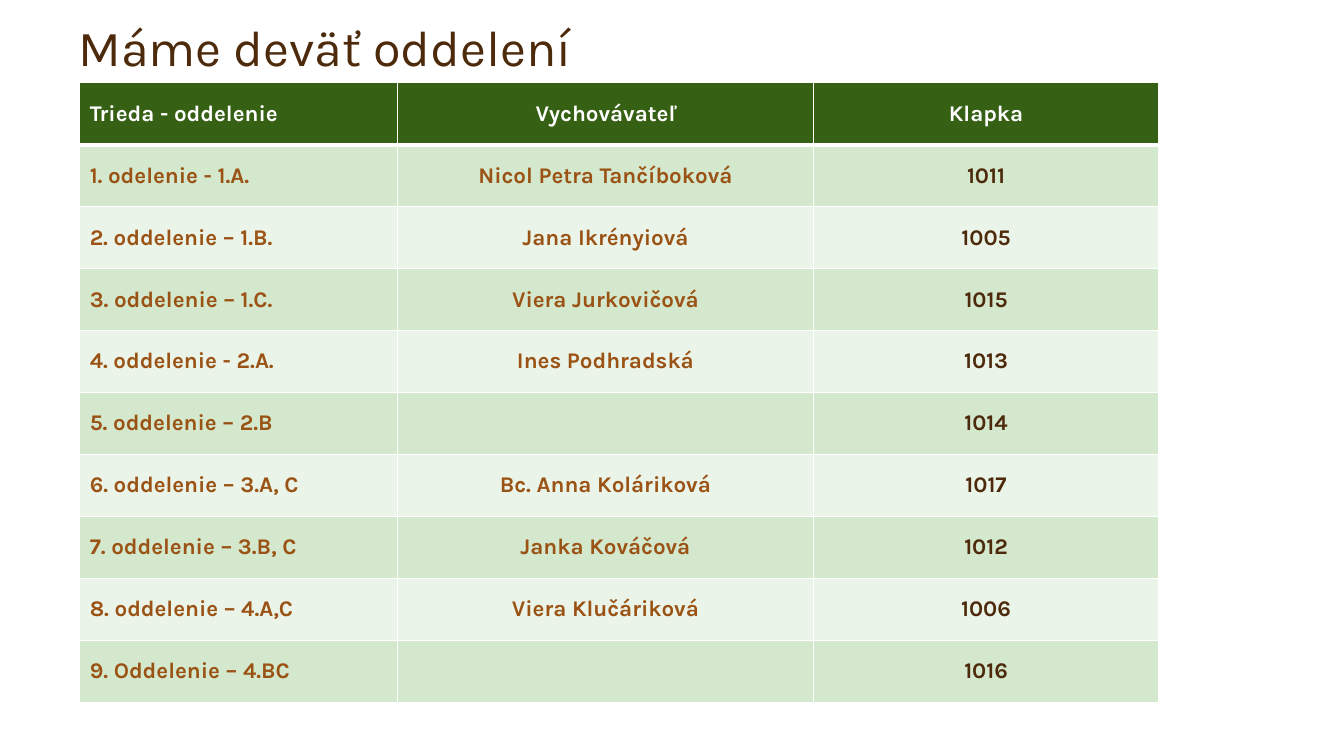
from lxml.etree import SubElement
from pptx import Presentation
from pptx.dml.color import RGBColor
from pptx.enum.text import MSO_ANCHOR as Anchor, PP_ALIGN as Align
from pptx.oxml.ns import qn
from pptx.util import Inches, Pt

COLORS = {
    "title": "4D2A0B",
    "header": "366013",
    "header_text": "FFFFFF",
    "odd_row": "D4E8CD",
    "even_row": "EBF4E8",
    "name": "9A5315",
    "extension": "4D2A0B",
    "border": "FFFFFF",
}
FONT = "Karla"
ROWS = [
    ("Trieda - oddelenie", "Vychovávateľ", "Klapka"),
    ("1. odelenie - 1.A.", "Nicol Petra Tančíboková", "1011"),
    ("2. oddelenie – 1.B.", "Jana Ikrényiová", "1005"),
    ("3. oddelenie – 1.C.", "Viera Jurkovičová", "1015"),
    ("4. oddelenie - 2.A.", "Ines Podhradská", "1013"),
    ("5. oddelenie – 2.B", "", "1014"),
    ("6. oddelenie – 3.A, C", "Bc. Anna Koláriková", "1017"),
    ("7. oddelenie – 3.B, C", "Janka Kováčová", "1012"),
    ("8. oddelenie – 4.A,C", "Viera Klučáriková", "1006"),
    ("9. Oddelenie – 4.BC", "", "1016"),
]
COLUMN_WIDTHS = [3.15, 4.13, 3.42]
TABLE_LEFT, TABLE_TOP, TABLE_HEIGHT = 0.79, 0.82, 6.15


def style_text(para, size, color, bold=False):
    for span in para.runs:
        span.font.name = FONT
        span.font.size = Pt(size)
        span.font.bold = bold
        span.font.color.rgb = RGBColor.from_string(COLORS[color])


def add_border(cell, side, width):
    line = SubElement(cell._tc.get_or_add_tcPr(), qn(f"a:ln{side}"), w=str(Pt(width)))
    fill = SubElement(line, qn("a:solidFill"))
    SubElement(fill, qn("a:srgbClr"), val=COLORS["border"])


deck = Presentation()
deck.slide_width, deck.slide_height = Inches(13.33), Inches(7.5)
page = deck.slides.add_slide(deck.slide_layouts[6])

title = page.shapes.add_textbox(Inches(0.68), 0, Inches(10.62), Inches(TABLE_TOP))
title_frame = title.text_frame
title_frame.word_wrap = True
title_frame.vertical_anchor = Anchor.BOTTOM
title_frame.text = "Máme deväť oddelení"
title_frame.paragraphs[0].line_spacing = 0.9
style_text(title_frame.paragraphs[0], 36, "title")

table = page.shapes.add_table(
    len(ROWS), len(COLUMN_WIDTHS), Inches(TABLE_LEFT), Inches(TABLE_TOP),
    Inches(sum(COLUMN_WIDTHS)), Inches(TABLE_HEIGHT),
).table
for column, width in zip(table.columns, COLUMN_WIDTHS):
    column.width = Inches(width)

for row_index, row in enumerate(ROWS):
    is_header = row_index == 0
    row_fill = "header" if is_header else ("even_row", "odd_row")[row_index % 2]
    text_colors = ["header_text"] * 3 if is_header else ["name", "name", "extension"]
    top_width = 3 if row_index == 1 else 1
    bottom_width = 3 if is_header else 1
    for column_index, text in enumerate(row):
        cell = table.cell(row_index, column_index)
        for side, width in zip("LRTB", (1, 1, top_width, bottom_width)):
            add_border(cell, side, width)
        cell.fill.solid()
        cell.fill.fore_color.rgb = RGBColor.from_string(COLORS[row_fill])
        cell.vertical_anchor = Anchor.MIDDLE
        cell.text_frame.text = text
        para = cell.text_frame.paragraphs[0]
        para.alignment = Align.CENTER if column_index else Align.LEFT
        style_text(para, 16, text_colors[column_index], bold=True)

deck.save("out.pptx")
